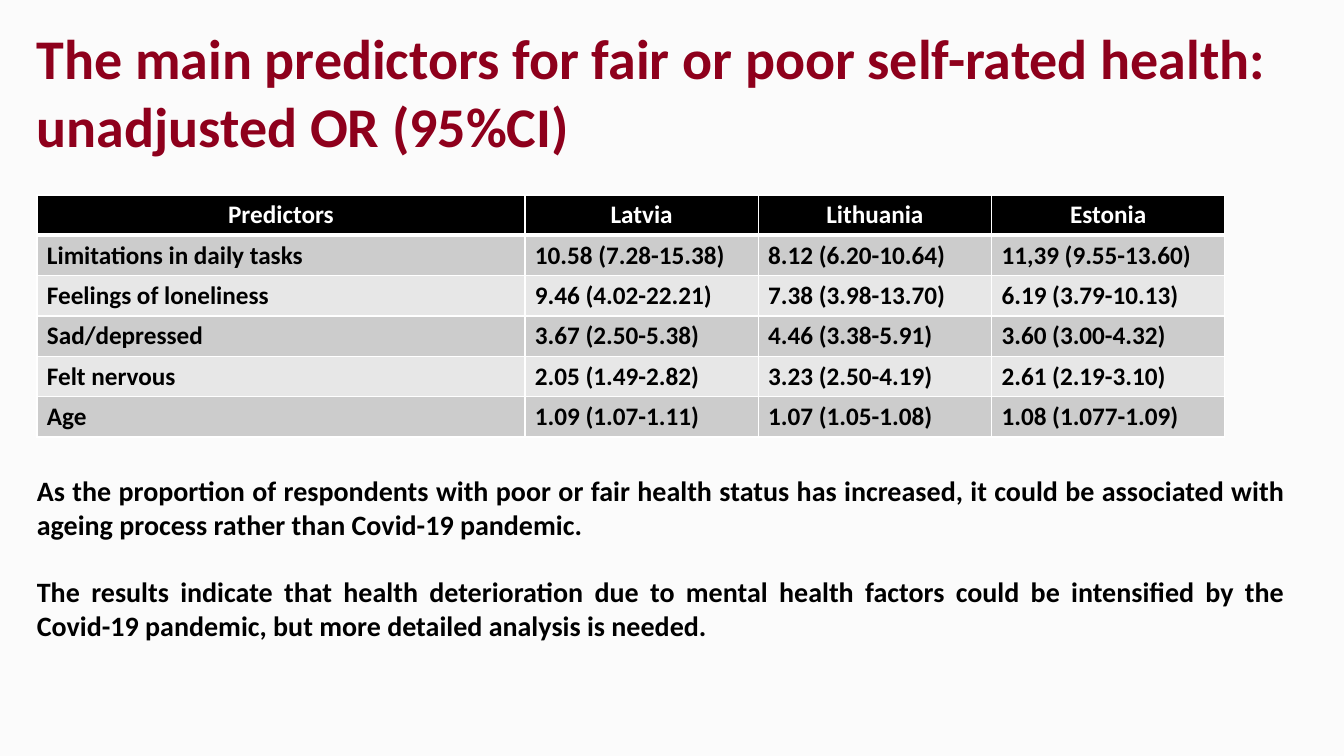
from lxml.etree import SubElement
from pptx import Presentation
from pptx.dml.color import RGBColor
from pptx.enum.text import PP_ALIGN
from pptx.oxml.ns import qn
from pptx.util import Emu, Pt

EMU_PER_PX = 914400 / 100.8
FONT = "Calibri"
COLORS = {
    "background": "FBFBFB",
    "title": "8E001C",
    "text": "000000",
    "header": "000000",
    "border": "FFFFFF",
    "odd_row": "CCCCCC",
    "even_row": "E7E7E7",
}
TITLE = "The main predictors for fair or poor self-rated health: unadjusted OR (95%CI)"
ODDS_RATIOS = [
    ["Predictors", "Latvia", "Lithuania", "Estonia"],
    ["Limitations in daily tasks", "10.58 (7.28-15.38)", "8.12 (6.20-10.64)", "11,39 (9.55-13.60)"],
    ["Feelings of loneliness", "9.46 (4.02-22.21)", "7.38 (3.98-13.70)", "6.19 (3.79-10.13)"],
    ["Sad/depressed", "3.67 (2.50-5.38)", "4.46 (3.38-5.91)", "3.60 (3.00-4.32)"],
    ["Felt nervous", "2.05 (1.49-2.82)", "3.23 (2.50-4.19)", "2.61 (2.19-3.10)"],
    ["Age", "1.09 (1.07-1.11)", "1.07 (1.05-1.08)", "1.08 (1.077-1.09)"],
]
CONCLUSIONS = [
    "As the proportion of respondents with poor or fair health status has increased, "
    "it could be associated with ageing process rather than Covid-19 pandemic.",
    "The results indicate that health deterioration due to mental health factors "
    "could be intensified by the Covid-19 pandemic, but more detailed analysis is needed.",
]


def px(length):
    """Turn pixels into EMU."""
    return Emu(round(length * EMU_PER_PX))


def rgb(name):
    """Look up a named colour."""
    return RGBColor.from_string(COLORS[name])


def style(paragraph, size, color, align=PP_ALIGN.LEFT):
    """Align a paragraph and format its runs in bold."""
    paragraph.alignment = align
    for run in paragraph.runs:
        run.font.name = FONT
        run.font.size = Pt(size)
        run.font.bold = True
        run.font.color.rgb = rgb(color)


def add_text(slide, box, lines, size, color, align=PP_ALIGN.LEFT, gap=0):
    """Place wrapped paragraphs in a box, with a gap between them."""
    frame = slide.shapes.add_textbox(*map(px, box)).text_frame
    frame.word_wrap = True
    frame.text = "\n".join(lines)
    for index, paragraph in enumerate(frame.paragraphs):
        style(paragraph, size, color, align)
        if index:
            paragraph.space_before = Pt(gap)


def add_borders(cell, top, bottom):
    """Draw the four borders of a cell, with widths in points."""
    properties = cell._tc.get_or_add_tcPr()
    for side, width in (("L", 1), ("R", 1), ("T", top), ("B", bottom)):
        line = SubElement(properties, qn(f"a:ln{side}"), w=str(Pt(width)))
        fill = SubElement(line, qn("a:solidFill"))
        SubElement(fill, qn("a:srgbClr"), val=COLORS["border"])


def add_odds_table(slide, box, predictor_width):
    """Place the table of odds ratios, one column per country."""
    rows, columns = len(ODDS_RATIOS), len(ODDS_RATIOS[0])
    table = slide.shapes.add_table(rows, columns, *map(px, box)).table
    country_width = (box[2] - predictor_width) / (columns - 1)
    for index, column in enumerate(table.columns):
        column.width = px(country_width if index else predictor_width)
    for row, values in enumerate(ODDS_RATIOS):
        table.rows[row].height = px(box[3] / rows)
        header = row == 0
        fill = "header" if header else "odd_row" if row % 2 else "even_row"
        for column, value in enumerate(values):
            cell = table.cell(row, column)
            cell.text = value
            cell.margin_left = cell.margin_right = px(10)
            cell.margin_top = cell.margin_bottom = px(5)
            align = PP_ALIGN.CENTER if header else PP_ALIGN.LEFT
            style(cell.text_frame.paragraphs[0], 18, "border" if header else "text", align)
            add_borders(cell, 3 if row == 1 else 1, 3 if header else 1)
            cell.fill.solid()
            cell.fill.fore_color.rgb = rgb(fill)


def build_predictors_slide(presentation):
    """Add the slide on predictors of self-rated health."""
    slide = presentation.slides.add_slide(presentation.slide_layouts[6])
    slide.background.fill.solid()
    slide.background.fill.fore_color.rgb = rgb("background")
    add_text(slide, (27, 19, 1317, 146), [TITLE], 40, "title")
    add_odds_table(slide, (37, 195, 1188, 242), 488)
    add_text(slide, (27, 469, 1268, 179), CONCLUSIONS, 20, "text", PP_ALIGN.JUSTIFY, 24)


def main():
    """Build and save the presentation."""
    presentation = Presentation()
    presentation.slide_width = px(1344)
    presentation.slide_height = px(756)
    build_predictors_slide(presentation)
    presentation.save("out.pptx")


if __name__ == "__main__":
    main()
